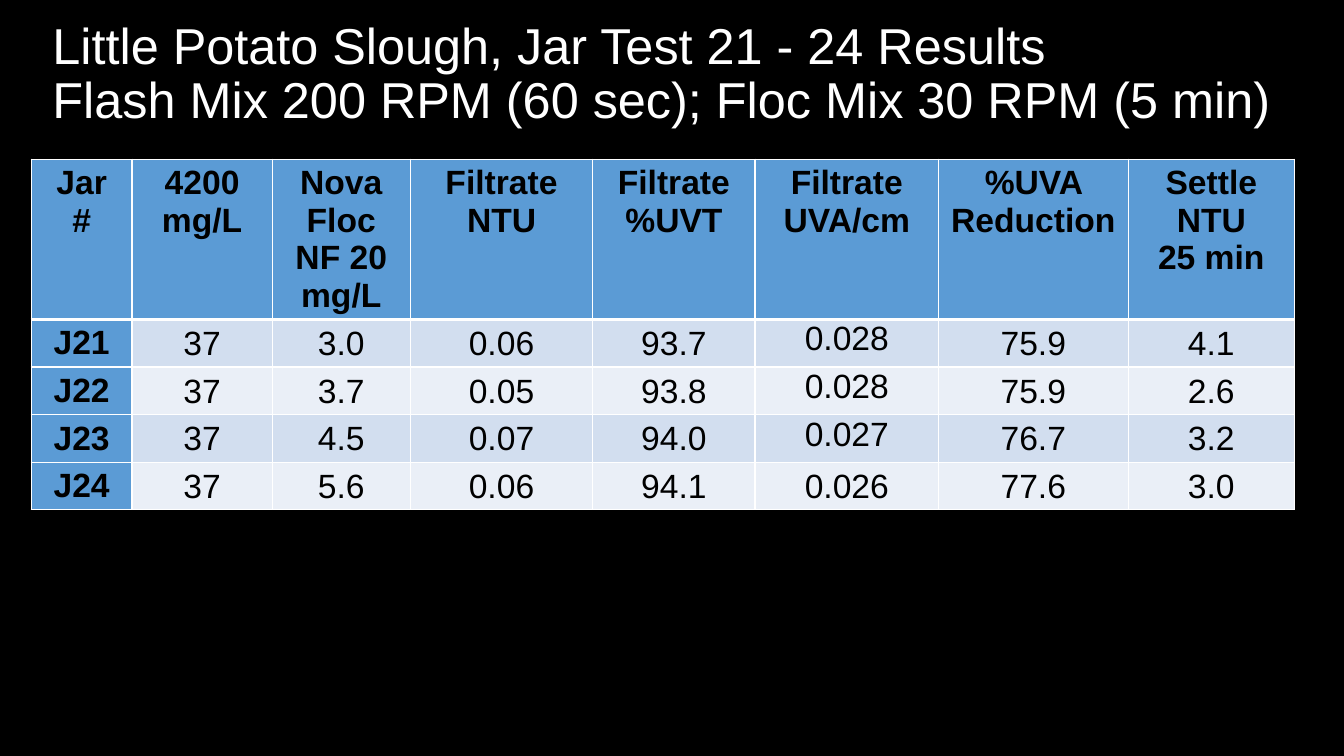
from lxml.etree import SubElement
from pptx import Presentation
from pptx.dml.color import RGBColor
from pptx.enum.text import MSO_ANCHOR as ANCHOR, MSO_AUTO_SIZE as AUTO_SIZE, PP_ALIGN as ALIGN
from pptx.oxml.ns import qn
from pptx.util import Inches, Pt

BLACK = RGBColor(0x00, 0x00, 0x00)
WHITE = RGBColor(0xFF, 0xFF, 0xFF)
BLUE = RGBColor(0x5B, 0x9B, 0xD5)
BAND_DARK = RGBColor(0xD2, 0xDE, 0xEF)
BAND_LIGHT = RGBColor(0xEA, 0xEF, 0xF7)

TITLE = ("Little Potato Slough, Jar Test 21 - 24 Results\v"
         "Flash Mix 200 RPM (60 sec); Floc Mix 30 RPM (5 min)")
HEADERS = ["Jar\v#", "4200\nmg/L", "Nova Floc\nNF 20\nmg/L", "Filtrate\nNTU",
           "Filtrate\n%UVT", "Filtrate\nUVA/cm", "%UVA Reduction",
           "Settle\nNTU\n25 min"]
RESULTS = [
    ["J21", "37", "3.0", "0.06", "93.7", "0.028", "75.9", "4.1"],
    ["J22", "37", "3.7", "0.05", "93.8", "0.028", "75.9", "2.6"],
    ["J23", "37", "4.5", "0.07", "94.0", "0.027", "76.7", "3.2"],
    ["J24", "37", "5.6", "0.06", "94.1", "0.026", "77.6", "3.0"],
]
COL_WIDTHS = [1, 1.39, 1.37, 1.81, 1.61, 1.82, 1.88, 1.65]
HEADER_HEIGHT, ROW_HEIGHT = 1.59, 0.47
UVA_COL = HEADERS.index("Filtrate\nUVA/cm")


class ResultsSlide:
    font = "Arial"
    title_size = Pt(36)
    table_size = Pt(24)

    def __init__(self, prs):
        self.slide = prs.slides.add_slide(prs.slide_layouts[5])
        fill = self.slide.background.fill
        fill.solid()
        fill.fore_color.rgb = BLACK

    def format_text(self, tf, size, color, align, bold=False):
        for p in tf.paragraphs:
            p.alignment = align
            for r in p.runs:
                r.font.name = self.font
                r.font.size = size
                r.font.bold = bold
                r.font.color.rgb = color

    def title(self, text, left, top, width, height):
        sp = self.slide.shapes.title
        sp.left, sp.top = Inches(left), Inches(top)
        sp.width, sp.height = Inches(width), Inches(height)
        tf = sp.text_frame
        tf.text = text
        tf.word_wrap = True
        tf.auto_size = AUTO_SIZE.NONE
        tf.vertical_anchor = ANCHOR.MIDDLE
        tf.paragraphs[0].line_spacing = 0.9
        self.format_text(tf, self.title_size, WHITE, ALIGN.LEFT)

    def borders(self, cell, top, bottom):
        tc_pr = cell._tc.get_or_add_tcPr()
        for side, width in (("L", 1), ("R", 1), ("T", top), ("B", bottom)):
            ln = SubElement(tc_pr, qn(f"a:ln{side}"), w=str(Pt(width)))
            SubElement(SubElement(ln, qn("a:solidFill")), qn("a:srgbClr"), val=str(WHITE))

    def cell(self, cell, text, fill, bold, top=1, bottom=1):
        self.borders(cell, top, bottom)
        cell.fill.solid()
        cell.fill.fore_color.rgb = fill
        cell.text_frame.text = text
        self.format_text(cell.text_frame, self.table_size, BLACK, ALIGN.CENTER, bold)

    def value_cell(self, cell, text, fill, anchor, top):
        self.cell(cell, text, fill, False, top)
        cell.margin_left = cell.margin_right = cell.margin_top = Inches(0.01)
        cell.margin_bottom = 0
        cell.vertical_anchor = anchor

    def table(self, headers, results, left, top):
        height = HEADER_HEIGHT + ROW_HEIGHT * len(results)
        table = self.slide.shapes.add_table(
            len(results) + 1, len(headers), Inches(left), Inches(top),
            Inches(sum(COL_WIDTHS)), Inches(height)).table
        for column, width in zip(table.columns, COL_WIDTHS):
            column.width = Inches(width)
        for row in table.rows:
            row.height = Inches(ROW_HEIGHT)
        table.rows[0].height = Inches(HEADER_HEIGHT)
        for c, header in enumerate(headers):
            self.cell(table.cell(0, c), header, BLUE, True, bottom=3)
        for r, (jar, *values) in enumerate(results, 1):
            rule = 3 if r == 1 else 1
            band = BAND_DARK if r % 2 else BAND_LIGHT
            self.cell(table.cell(r, 0), jar, BLUE, True, rule)
            for c, value in enumerate(values, 1):
                at_top = c == UVA_COL and r < len(results)
                anchor = ANCHOR.TOP if at_top else ANCHOR.MIDDLE
                self.value_cell(table.cell(r, c), value, band, anchor, rule)


def main():
    prs = Presentation()
    prs.slide_width, prs.slide_height = Inches(13.33), Inches(7.5)
    s = ResultsSlide(prs)
    s.title(TITLE, 0.42, 0.11, 12.69, 1.27)
    s.table(HEADERS, RESULTS, 0.31, 1.58)
    prs.save("out.pptx")


if __name__ == "__main__":
    main()
